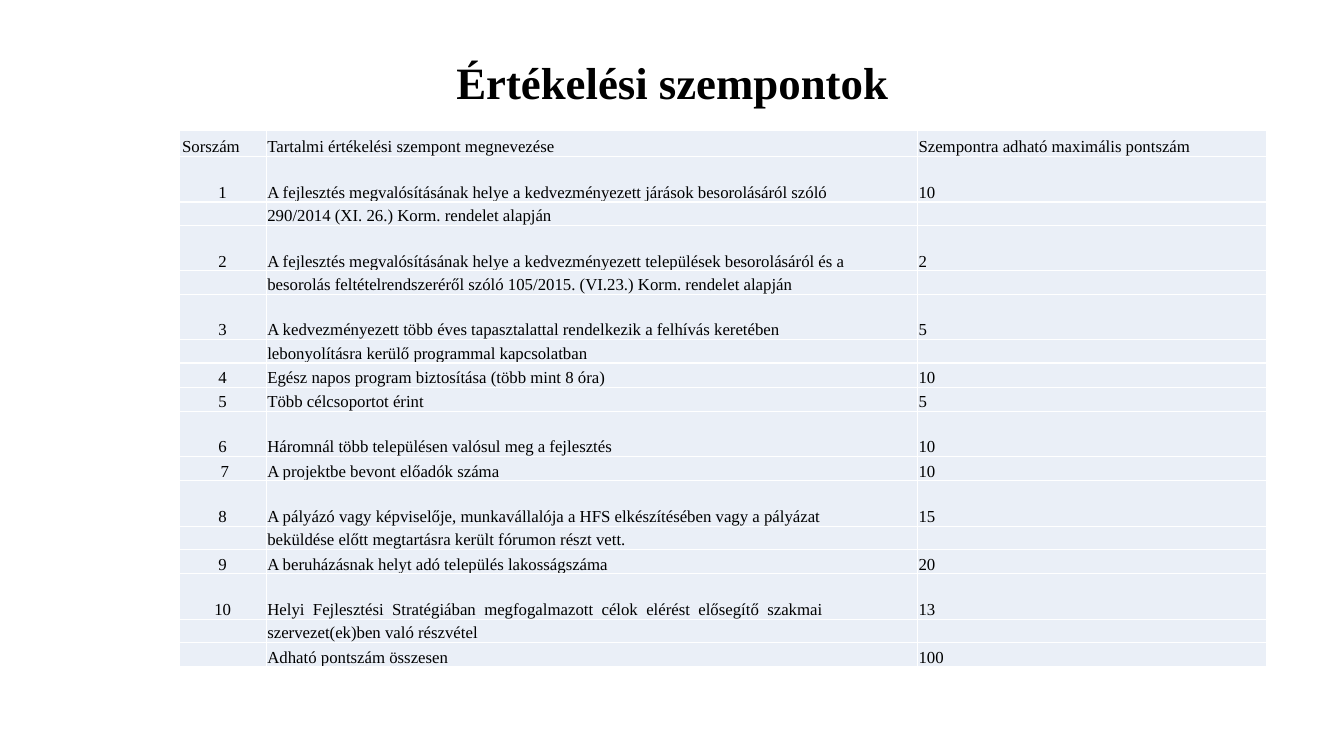
from dataclasses import dataclass

from lxml.etree import SubElement
from pptx import Presentation
from pptx.dml.color import RGBColor
from pptx.enum.text import MSO_ANCHOR as Anchor, PP_ALIGN as Align
from pptx.oxml.ns import qn
from pptx.util import Emu, Inches, Pt

BLACK = RGBColor(0x00, 0x00, 0x00)
WHITE = RGBColor(0xFF, 0xFF, 0xFF)
PALE = RGBColor(0xEA, 0xEF, 0xF7)
FONT = "Times New Roman"
WIDE, HIGH = Inches(13.33), Inches(7.5)

# Percent of the slide's width (columns) and height (rows)
COLS = (6.5, 48.45, 25.95)
HEAD, TALL, PLAIN, NEXT = 3.47, 6, 3.2, 3.1


@dataclass
class Item:
    number: str
    lines: tuple[str, ...]
    score: str
    height: float = PLAIN


@dataclass
class Row:
    texts: tuple[str, str, str]
    height: float


ITEMS = (
    Item("Sorszám", ("Tartalmi értékelési szempont megnevezése",),
         "Szempontra adható maximális pontszám", HEAD),
    Item("1", ("A fejlesztés megvalósításának helye a kedvezményezett járások besorolásáról szóló",
               "290/2014 (XI. 26.) Korm. rendelet alapján"), "10", TALL),
    Item("2", ("A fejlesztés megvalósításának helye a kedvezményezett települések besorolásáról és a",
               "besorolás feltételrendszeréről szóló 105/2015. (VI.23.) Korm. rendelet alapján"), "2", TALL),
    Item("3", ("A kedvezményezett több éves tapasztalattal rendelkezik a felhívás keretében",
               "lebonyolításra kerülő programmal kapcsolatban"), "5", TALL),
    Item("4", ("Egész napos program biztosítása (több mint 8 óra)",), "10"),
    Item("5", ("Több célcsoportot érint",), "5"),
    Item("6", ("Háromnál több településen valósul meg a fejlesztés",), "10", TALL),
    Item(" 7", ("A projektbe bevont előadók száma",), "10"),
    Item("8", ("A pályázó vagy képviselője, munkavállalója a HFS elkészítésében vagy a pályázat",
               "beküldése előtt megtartásra került fórumon részt vett."), "15", TALL),
    Item("9", ("A beruházásnak helyt adó település lakosságszáma",), "20"),
    Item("10", ("Helyi  Fejlesztési  Stratégiában  megfogalmazott  célok  elérést  elősegítő  szakmai",
                "szervezet(ek)ben való részvétel"), "13", TALL),
    Item("", ("Adható pontszám összesen",), "100"),
)


def across(share: float) -> Emu:
    return Emu(round(WIDE * share / 100))


def down(share: float) -> Emu:
    return Emu(round(HIGH * share / 100))


def split(item: Item) -> list[Row]:
    """Give each line of an item its own table row."""
    first, *rest = item.lines
    return [Row((item.number, first, item.score), item.height),
            *(Row(("", line, ""), NEXT) for line in rest)]


def write(frame, text: str, *, size: float, bold: bool = False, align=Align.LEFT,
          indent: float = 0, spacing: float = 1.0) -> None:
    para = frame.paragraphs[0]
    para.alignment = align
    para.line_spacing = spacing
    para._p.get_or_add_pPr().set("marL", str(Inches(indent)))
    if not text:
        # An empty cell keeps its row low only with a small end mark
        para._p.get_or_add_endParaRPr().set("sz", str(round(size * 100)))
        return
    run = para.add_run()
    run.text = text
    run.font.name = FONT
    run.font.size = Pt(size)
    run.font.bold = bold
    run.font.color.rgb = BLACK


def border(cell, color: RGBColor, width: float) -> None:
    props = cell._tc.get_or_add_tcPr()
    for side in ("lnL", "lnR", "lnT", "lnB"):
        line = SubElement(props, qn(f"a:{side}"), w=str(Pt(width)))
        fill = SubElement(line, qn("a:solidFill"))
        SubElement(fill, qn("a:srgbClr"), val=str(color))


def style(cell) -> None:
    border(cell, WHITE, 1)
    cell.fill.solid()
    cell.fill.fore_color.rgb = PALE
    cell.vertical_anchor = Anchor.BOTTOM
    cell.margin_left = cell.margin_right = 0
    cell.margin_top = cell.margin_bottom = 0


def draw_title(slide) -> None:
    title = slide.shapes.title
    title.left, title.top = across(6.9), down(5.33)
    title.width, title.height = across(86.27), down(11.87)
    title.text_frame.vertical_anchor = Anchor.MIDDLE
    write(title.text_frame, "Értékelési szempontok", size=32, bold=True,
          align=Align.CENTER, spacing=0.9)


def draw_table(slide, rows: list[Row]) -> None:
    total = sum(row.height for row in rows)
    table = slide.shapes.add_table(len(rows), len(COLS), across(13.32), down(17.25),
                                   across(sum(COLS)), down(total)).table
    table.first_row = table.horz_banding = False
    for col, share in zip(table.columns, COLS):
        col.width = across(share)
    for r, row in enumerate(rows):
        table.rows[r].height = down(row.height)
        for c, text in enumerate(row.texts):
            cell = table.cell(r, c)
            style(cell)
            if c:
                write(cell.text_frame, text, size=12, indent=0.01)
            elif r:
                write(cell.text_frame, text, size=12, align=Align.CENTER)
            else:
                write(cell.text_frame, text, size=12, indent=0.03)


def main() -> None:
    deck = Presentation()
    deck.slide_width, deck.slide_height = WIDE, HIGH
    slide = deck.slides.add_slide(deck.slide_layouts[5])
    draw_title(slide)
    draw_table(slide, [row for item in ITEMS for row in split(item)])
    deck.save("out.pptx")


if __name__ == "__main__":
    main()
